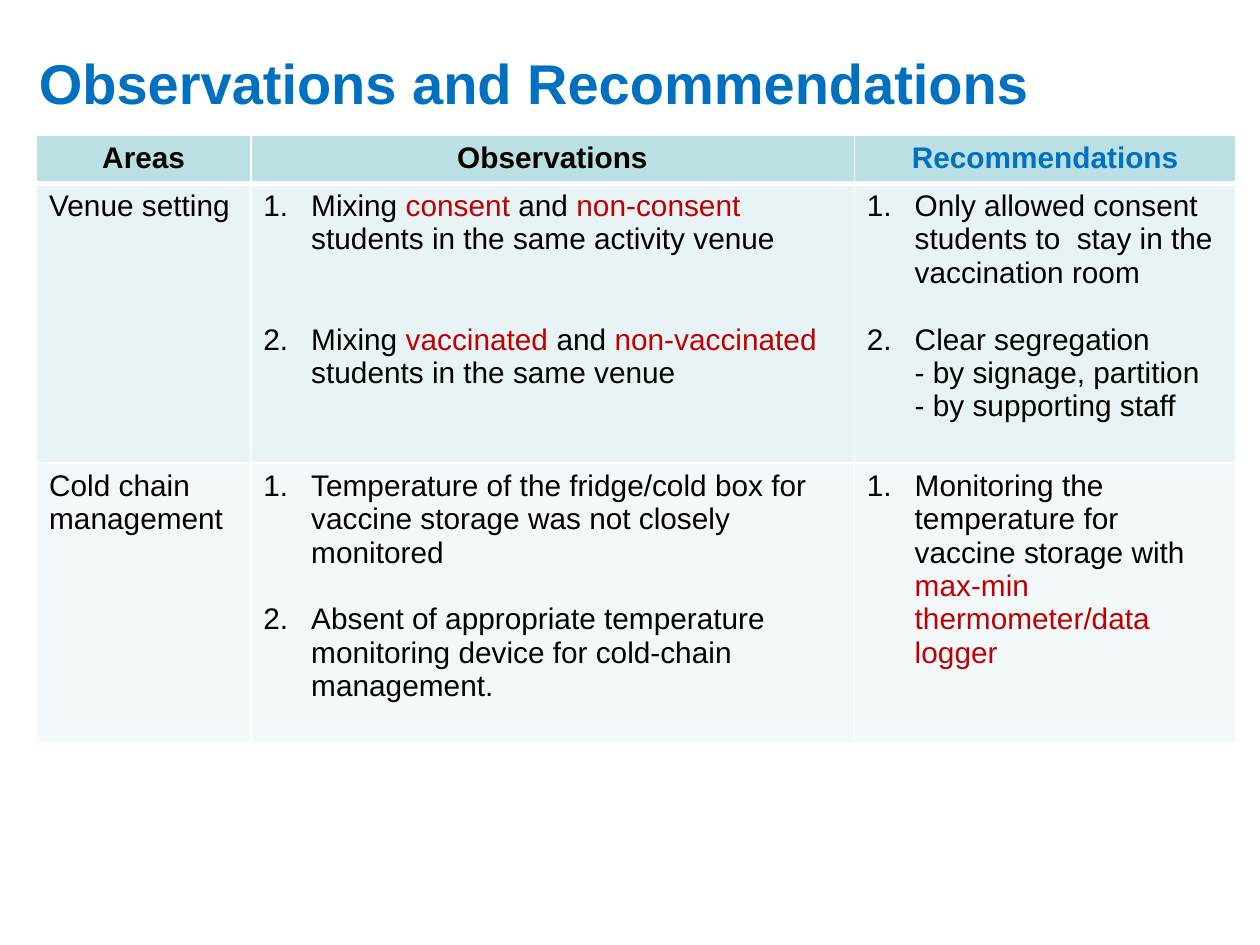
from lxml import etree
from pptx import Presentation
from pptx.dml.color import RGBColor
from pptx.enum.text import MSO_ANCHOR, PP_ALIGN
from pptx.oxml.ns import qn
from pptx.util import Inches, Pt

CENTER = PP_ALIGN.CENTER
MIDDLE = MSO_ANCHOR.MIDDLE
COLORS = {
    "blue": "0070C0",
    "red": "C00000",
    "black": "000000",
    "white": "FFFFFF",
    "header": "BBE0E3",
    "venue": "E7F3F4",
    "cold_chain": "F3F9FA",
}
LINE_HEIGHT = 19.1


def style_font(font, size, color, bold=False):
    font.name = "Arial"
    font.size = Pt(size)
    font.bold = bold
    font.color.rgb = RGBColor.from_string(COLORS[color])


def add_border(cell, side, position, width):
    line = etree.Element(qn(f"a:ln{side}"), w=str(Pt(width)))
    fill = etree.SubElement(line, qn("a:solidFill"))
    etree.SubElement(fill, qn("a:srgbClr"), val=COLORS["white"])
    cell._tc.get_or_add_tcPr().insert(position, line)


deck = Presentation()
deck.slide_width = Inches(10)
deck.slide_height = Inches(7.5)
page = deck.slides.add_slide(deck.slide_layouts[6])

title_box = page.shapes.add_textbox(Inches(0.21), Inches(0.39), Inches(9.68), Inches(0.53))
title_frame = title_box.text_frame
title_frame.word_wrap = True
title_frame.vertical_anchor = MIDDLE
title_para = title_frame.paragraphs[0]
title_para.text = "Observations and Recommendations"
style_font(title_para.font, 32, "blue", True)

column_widths = [1.7, 4.79, 3.03]
row_heights = [0.35, 2.22, 2.22]
table = page.shapes.add_table(
    3, 3, Inches(0.29), Inches(1.07), Inches(sum(column_widths)), Inches(sum(row_heights))
).table
for column, width in zip(table.columns, column_widths):
    column.width = Inches(width)
for row, height in zip(table.rows, row_heights):
    row.height = Inches(height)

headings = [("Areas", "black"), ("Observations", "black"), ("Recommendations", "blue")]
for column_index, (heading, color) in enumerate(headings):
    para = table.cell(0, column_index).text_frame.paragraphs[0]
    para.text = heading
    para.alignment = CENTER
    style_font(para.font, 17, color, True)

# Each item: blank lines above it, then its pieces of text with their colours.
areas = [
    (
        "Venue setting",
        [
            (0, [("Mixing ", "black"), ("consent ", "red"), ("and ", "black"),
                 ("non-consent ", "red"), ("students in the same activity venue", "black")]),
            (2, [("Mixing ", "black"), ("vaccinated ", "red"), ("and ", "black"),
                 ("non-vaccinated ", "red"), ("students in the same venue", "black")]),
        ],
        [
            (0, [("Only allowed consent students to  stay in the vaccination room", "black")]),
            (1, [("Clear segregation\n- by signage, partition\n- by supporting staff", "black")]),
        ],
    ),
    (
        "Cold chain management",
        [
            (0, [("Temperature of the fridge/cold box for vaccine storage "
                  "was not closely monitored", "black")]),
            (1, [("Absent of appropriate temperature monitoring device "
                  "for cold-chain management.", "black")]),
        ],
        [
            (0, [("Monitoring the temperature for vaccine storage with ", "black"),
                 ("max-min thermometer/data logger", "red")]),
        ],
    ),
]

for row_index, (area, *item_lists) in enumerate(areas, start=1):
    area_para = table.cell(row_index, 0).text_frame.paragraphs[0]
    area_para.text = area
    style_font(area_para.font, 17, "black")
    for column_index, items in enumerate(item_lists, start=1):
        frame = table.cell(row_index, column_index).text_frame
        for item_index, (gap_lines, pieces) in enumerate(items):
            para = frame.add_paragraph() if item_index else frame.paragraphs[0]
            if gap_lines:
                para.space_before = Pt(gap_lines * LINE_HEIGHT)
            properties = para._p.get_or_add_pPr()
            properties.set("marL", str(Inches(0.38)))
            properties.set("indent", str(Inches(-0.38)))
            etree.SubElement(properties, qn("a:buFont"), typeface="+mj-lt")
            etree.SubElement(properties, qn("a:buAutoNum"), type="arabicPeriod")
            style_font(para.font, 17, "black")
            for text, color in pieces:
                for line_index, line in enumerate(text.split("\n")):
                    if line_index:
                        para.add_line_break()
                    span = para.add_run()
                    span.text = line
                    if color != "black":
                        span.font.color.rgb = RGBColor.from_string(COLORS[color])

for row_index, fill_name in enumerate(["header", "venue", "cold_chain"]):
    for column_index in range(3):
        cell = table.cell(row_index, column_index)
        cell.fill.solid()
        cell.fill.fore_color.rgb = RGBColor.from_string(COLORS[fill_name])
        top_width = 3 if row_index == 1 else 1
        bottom_width = 3 if row_index == 0 else 1
        border_widths = [("L", 1), ("R", 1), ("T", top_width), ("B", bottom_width)]
        for position, (side, width) in enumerate(border_widths):
            add_border(cell, side, position, width)

deck.save("out.pptx")
